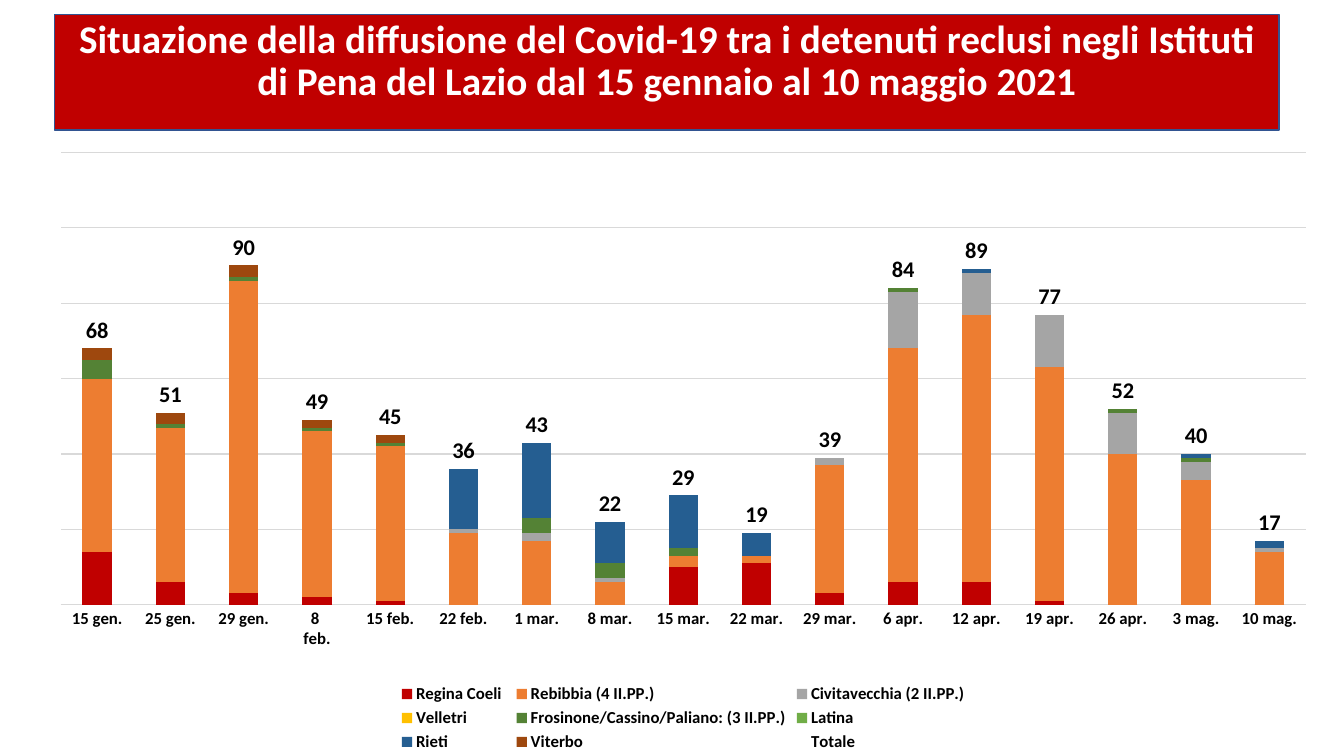
from lxml import etree
from pptx import Presentation
from pptx.chart.data import CategoryChartData
from pptx.dml.color import RGBColor
from pptx.enum.chart import XL_CHART_TYPE, XL_LABEL_POSITION, XL_LEGEND_POSITION, XL_TICK_MARK
from pptx.enum.text import MSO_ANCHOR, MSO_AUTO_SIZE, PP_ALIGN
from pptx.oxml.ns import qn
from pptx.util import Cm, Pt

STACKED = XL_CHART_TYPE.COLUMN_STACKED
INSIDE_BASE = XL_LABEL_POSITION.INSIDE_BASE
BOTTOM = XL_LEGEND_POSITION.BOTTOM
NO_TICK = XL_TICK_MARK.NONE
TOP = MSO_ANCHOR.TOP
NO_FIT = MSO_AUTO_SIZE.NONE
CENTER = PP_ALIGN.CENTER

FONT = "Calibri"
BLACK, WHITE, RED, BLUE, GREY = "000000", "FFFFFF", "C00000", "325491", "D9D9D9"
TITLE = ("Situazione della diffusione del Covid-19 tra i detenuti reclusi negli Istituti "
         "di Pena del Lazio dal 15 gennaio al 10 maggio 2021")
TITLE_BOX = (1.37, 0.36, 30.86, 2.92)
CHART_BOX = (1.14, 3.45, 32.16, 15.6)
PLOT_AREA = {"x": 0.012, "y": 0.025, "w": 0.976, "h": 0.731}
DATES = ["15 gen.", "25 gen.", "29 gen.", "8 \nfeb.", "15 feb.", "22 feb.", "1 mar.", "8 mar.",
         "15 mar.", "22 mar.", "29 mar.", "6 apr.", "12 apr.", "19 apr.", "26 apr.", "3 mag.",
         "10 mag."]
PRISONS = [
    ("Regina Coeli ", RED, [14, 6, 3, 2, 1, 0, 0, 0, 10, 11, 3, 6, 6, 1, 0, 0, 0]),
    ("Rebibbia (4 II.PP.)", "ED7D31",
     [46, 41, 83, 44, 41, 19, 17, 6, 3, 2, 34, 62, 71, 62, 40, 33, 14]),
    ("Civitavecchia (2 II.PP.)", "A5A5A5",
     [0, 0, 0, 0, 0, 1, 2, 1, 0, 0, 2, 15, 11, 14, 11, 5, 1]),
    ("Velletri", "FFC000", [0] * len(DATES)),
    ("Frosinone/Cassino/Paliano: (3 II.PP.)", "548235",
     [5, 1, 1, 1, 1, 0, 4, 4, 2, 0, 0, 1, 0, 0, 1, 1, 0]),
    ("Latina", "70AD47", [0] * len(DATES)),
    ("Rieti", "255E91", [0, 0, 0, 0, 0, 16, 20, 11, 14, 6, 0, 0, 1, 0, 0, 1, 2]),
    ("Viterbo", "9E480E", [3, 3, 3, 2, 2, 0, 0, 0, 0, 0, 0, 0, 0, 0, 0, 0, 0]),
]
TOTALS = [sum(counts) for counts in zip(*(values for _, _, values in PRISONS))]


def color(value):
    return RGBColor.from_string(value)


def format_font(font, size, value=BLACK, bold=True):
    font.name = FONT
    font.size = Pt(size)
    font.bold = bold
    font.color.rgb = color(value)


def format_line(line, value, width):
    line.color.rgb = color(value)
    line.width = Pt(width)


def add_title(slide):
    title = slide.shapes.title
    title.left, title.top, title.width, title.height = map(Cm, TITLE_BOX)
    title.fill.solid()
    title.fill.fore_color.rgb = color(RED)
    format_line(title.line, BLUE, 1)
    frame = title.text_frame
    frame.text = TITLE
    frame.word_wrap = True
    frame.auto_size = NO_FIT
    frame.vertical_anchor = TOP
    paragraph = frame.paragraphs[0]
    paragraph.alignment = CENTER
    paragraph.line_spacing = 0.9
    paragraph.space_before = Pt(10)
    format_font(paragraph.runs[0].font, 28, WHITE)


def place_plot(chart):
    plot_area = chart.plots[0]._element.getparent()
    for layout in plot_area.findall(qn("c:layout")):
        plot_area.remove(layout)
    layout = etree.Element(qn("c:layout"))
    manual = etree.SubElement(layout, qn("c:manualLayout"))
    settings = {"layoutTarget": "inner", "xMode": "edge", "yMode": "edge", **PLOT_AREA}
    for name, value in settings.items():
        etree.SubElement(manual, qn(f"c:{name}")).set("val", str(value))
    plot_area.insert(0, layout)


def add_cases_chart(slide):
    data = CategoryChartData()
    data.categories = DATES
    for name, _, values in PRISONS:
        data.add_series(name, values)
    data.add_series("Totale", TOTALS)
    chart = slide.shapes.add_chart(STACKED, *map(Cm, CHART_BOX), data).chart
    chart.has_title = False
    format_font(chart.font, 10, bold=False)

    plot = chart.plots[0]
    plot.gap_width = 150
    plot.overlap = 100
    plot.vary_by_categories = False
    *prison_series, total_series = plot.series
    for series, (_, fill, _) in zip(prison_series, PRISONS):
        series.format.fill.solid()
        series.format.fill.fore_color.rgb = color(fill)
    total_series.format.fill.background()
    labels = total_series.data_labels
    labels.show_value = True
    labels.position = INSIDE_BASE
    format_font(labels.font, 16)

    dates_axis = chart.category_axis
    dates_axis.major_tick_mark = NO_TICK
    dates_axis.minor_tick_mark = NO_TICK
    format_font(dates_axis.tick_labels.font, 12)
    format_line(dates_axis.format.line, GREY, 0.75)
    cases_axis = chart.value_axis
    cases_axis.minimum_scale = 0
    cases_axis.maximum_scale = 120
    cases_axis.major_unit = 20
    cases_axis.visible = False
    cases_axis.has_major_gridlines = True
    format_line(cases_axis.major_gridlines.format.line, GREY, 0.75)

    chart.has_legend = True
    chart.legend.position = BOTTOM
    chart.legend.include_in_layout = False
    format_font(chart.legend.font, 12)
    place_plot(chart)


def main():
    presentation = Presentation()
    presentation.slide_width = Cm(33.87)
    presentation.slide_height = Cm(19.05)
    slide = presentation.slides.add_slide(presentation.slide_layouts[5])
    add_title(slide)
    add_cases_chart(slide)
    presentation.save("out.pptx")


if __name__ == "__main__":
    main()
